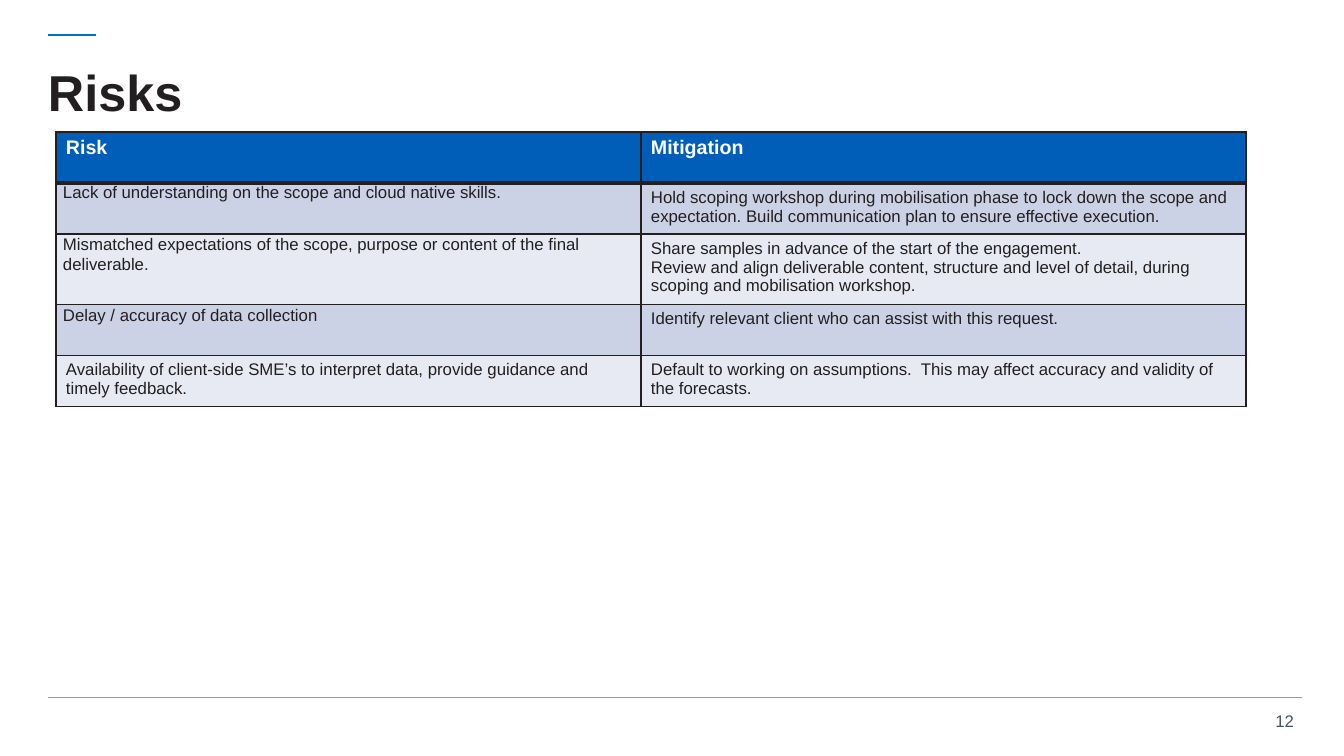
from lxml import etree
from pptx import Presentation
from pptx.dml.color import RGBColor
from pptx.enum.shapes import MSO_CONNECTOR
from pptx.enum.text import MSO_ANCHOR, PP_ALIGN
from pptx.oxml.ns import qn
from pptx.util import Pt

STRAIGHT = MSO_CONNECTOR.STRAIGHT
TOP, MIDDLE = MSO_ANCHOR.TOP, MSO_ANCHOR.MIDDLE
LEFT, RIGHT = PP_ALIGN.LEFT, PP_ALIGN.RIGHT

EMU_PER_PX = 914400 / 100.8
COLORS = {
    "ink": "231F20", "accent": "0072CE", "rule": "919EA8", "number": "425563",
    "header": "005EB8", "white": "FFFFFF", "band_dark": "CCD2E6", "band_light": "E7EAF3",
}
TITLE_FONT = {"size": Pt(36), "bold": True}
HEADER_FONT = {"size": Pt(14), "bold": True}
BODY_FONT = {"size": Pt(12), "bold": False}
DEFAULT_INSETS = (10, 5, 10, 5)
TIGHT_INSETS = (7, 0, 7, 0)
MARGIN_SIDES = ("margin_left", "margin_top", "margin_right", "margin_bottom")

COLUMN_WIDTHS = (585, 605)
ROW_HEIGHTS = (51, 51, 66, 51, 51)
TIGHT = {"insets": TIGHT_INSETS}
TIGHT_SPACED = {"insets": TIGHT_INSETS, "spacing": {"line_spacing": 1.07}}
TIGHT_AFTER = {
    "insets": TIGHT_INSETS,
    "spacing": {"line_spacing": 1.07, "space_after": Pt(8)},
}
RISK_ROWS = [
    (["Risk"], ["Mitigation"], {}),
    (["Lack of understanding on the scope and cloud native skills."],
     ["Hold scoping workshop during mobilisation phase to lock down the scope and "
      "expectation. Build communication plan to ensure effective execution."], TIGHT),
    (["Mismatched expectations of the scope, purpose or content of the final deliverable."],
     ["Share samples in advance of the start of the engagement.",
      "Review and align deliverable content, structure and level of detail, during "
      "scoping and mobilisation workshop."], TIGHT_AFTER),
    (["Delay / accuracy of data collection"],
     ["Identify relevant client who can assist with this request."], TIGHT_SPACED),
    (["Availability of client-side SME’s to interpret data, provide guidance and "
      "timely feedback."],
     ["Default to working on assumptions.  This may affect accuracy and validity of "
      "the forecasts."], {}),
]


def px(length):
    return round(length * EMU_PER_PX)


def rgb(name):
    return RGBColor.from_string(COLORS[name])


def set_values(target, values):
    for name, value in values.items():
        setattr(target, name, value)


def set_insets(target, insets):
    set_values(target, dict(zip(MARGIN_SIDES, map(px, insets))))


def write_paragraphs(frame, texts, font, color, spacing):
    for index, text in enumerate(texts):
        para = frame.add_paragraph() if index else frame.paragraphs[0]
        set_values(para, spacing)
        span = para.add_run()
        span.text = text
        set_values(span.font, {"name": "Arial", **font})
        span.font.color.rgb = rgb(color)


def add_text(page, box, text, font, color, spacing, anchor, insets):
    frame = page.shapes.add_textbox(*map(px, box)).text_frame
    set_values(frame, {"word_wrap": True, "vertical_anchor": anchor})
    set_insets(frame, insets)
    write_paragraphs(frame, [text], font, color, spacing)


def add_rule(page, left, top, width, color, weight):
    rule = page.shapes.add_connector(
        STRAIGHT, px(left), px(top), px(left + width), px(top))
    rule.line.color.rgb = rgb(color)
    rule.line.width = Pt(weight)
    etree.SubElement(rule._element.spPr, qn("a:effectLst"))


def add_borders(cell, weights):
    properties = cell._tc.get_or_add_tcPr()
    for index, (side, weight) in enumerate(weights.items()):
        border = etree.Element(qn(f"a:ln{side}"), w=str(Pt(weight)))
        fill = etree.SubElement(border, qn("a:solidFill"))
        etree.SubElement(fill, qn("a:srgbClr"), val=COLORS["ink"])
        properties.insert(index, border)


def add_heading(page, box):
    left, top, width, height = box
    add_rule(page, left, top, 48, "accent", 2)
    add_text(page, (left, top + 12, width, height - 12), "Risks", TITLE_FONT,
             "ink", {"alignment": LEFT, "line_spacing": 0.9}, MIDDLE, (0, 0, 0, 0))


def add_risk_table(page, box):
    table = page.shapes.add_table(
        len(RISK_ROWS), len(COLUMN_WIDTHS), *map(px, box)).table
    for column, width in zip(table.columns, COLUMN_WIDTHS):
        column.width = px(width)
    for row, height in zip(table.rows, ROW_HEIGHTS):
        row.height = px(height)
    for row_index, (risk, mitigation, risk_format) in enumerate(RISK_ROWS):
        is_header = row_index == 0
        font = HEADER_FONT if is_header else BODY_FONT
        color = "white" if is_header else "ink"
        band = "band_dark" if row_index % 2 else "band_light"
        weights = {"L": 1, "R": 1, "T": 3 if row_index == 1 else 1,
                   "B": 3 if is_header else 1}
        cells = ((risk, risk_format), (mitigation, {}))
        for column_index, (texts, cell_format) in enumerate(cells):
            cell = table.cell(row_index, column_index)
            cell.fill.solid()
            cell.fill.fore_color.rgb = rgb("header" if is_header else band)
            cell.vertical_anchor = TOP
            set_insets(cell, cell_format.get("insets", DEFAULT_INSETS))
            write_paragraphs(cell.text_frame, texts, font, color,
                             cell_format.get("spacing", {}))
            add_borders(cell, weights)


def add_footer(page, box):
    left, top, width, height = box
    add_rule(page, left, top, width, "rule", 0.75)
    add_text(page, (left + width - 39, top + 8, 41, height - 8), "12", BODY_FONT,
             "number", {"alignment": RIGHT}, TOP, DEFAULT_INSETS)


def main():
    deck = Presentation()
    deck.slide_width, deck.slide_height = px(1344), px(756)
    page = deck.slides.add_slide(deck.slide_layouts[6])
    add_heading(page, (48, 35, 1257, 108))
    add_risk_table(page, (56, 132, sum(COLUMN_WIDTHS), sum(ROW_HEIGHTS)))
    add_footer(page, (48, 698, 1254, 38))
    deck.save("out.pptx")


if __name__ == "__main__":
    main()
